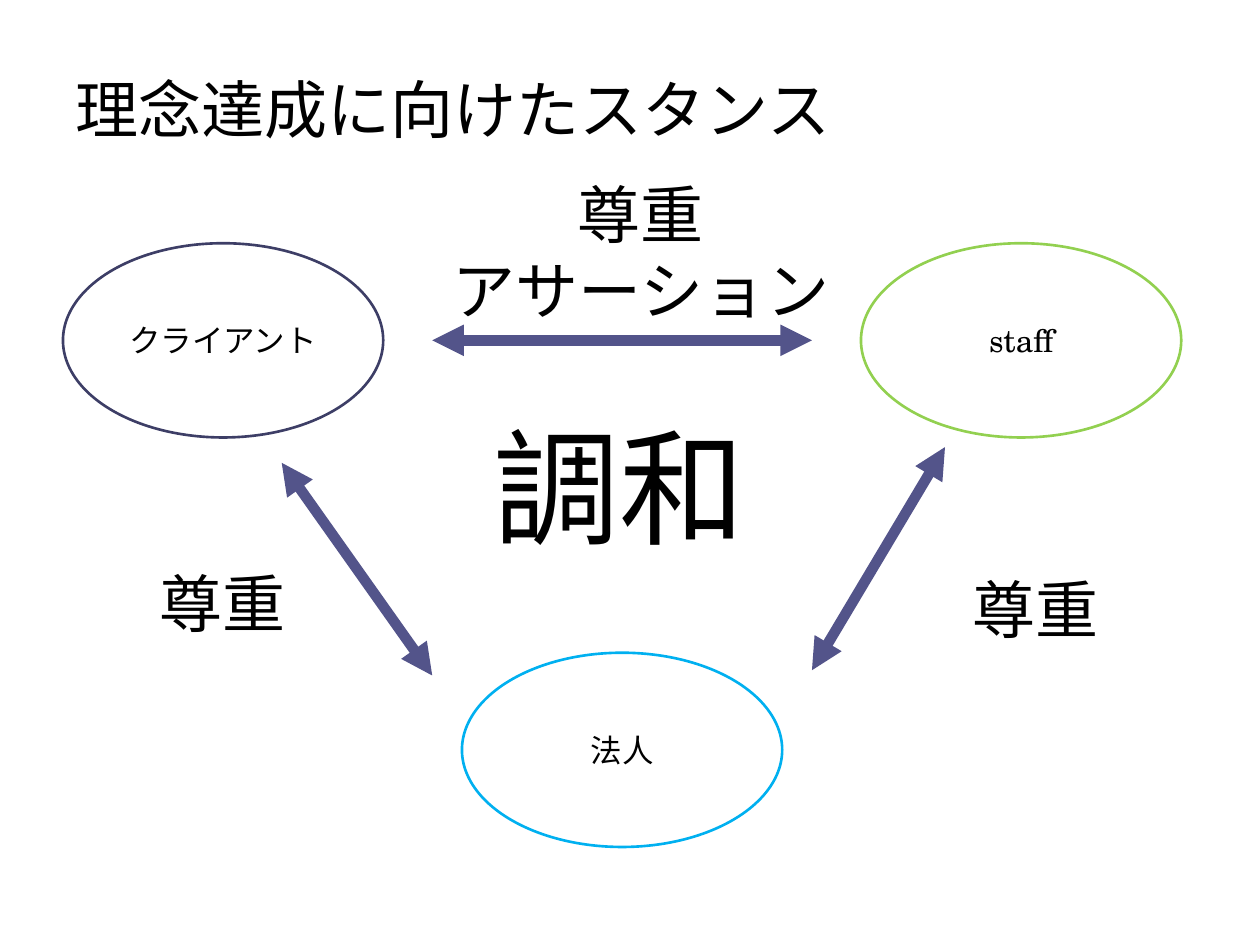
"""Build the slide on the stance for achieving the philosophy."""
import pptx
import pptx.dml.color
import pptx.enum.shapes
import pptx.enum.text
import pptx.oxml
import pptx.oxml.ns
import pptx.util

Pt = pptx.util.Pt
ALIGN = pptx.enum.text.PP_ALIGN
ANCHOR = pptx.enum.text.MSO_ANCHOR
FIT = pptx.enum.text.MSO_AUTO_SIZE
COLORS = {
    "text": "000000",
    "arrow": "53548A",
    "client": "3D3E66",
    "staff": "92D050",
    "corporation": "00B0F0",
}
BODY_FONT = "TeX Gyre Schola"


def color(name):
    return pptx.dml.color.RGBColor.from_string(COLORS[name])


def write(box, lines, size, font, align, frame_format):
    frame = box.text_frame
    for name, value in frame_format.items():
        setattr(frame, name, value)
    for index, line in enumerate(lines):
        para = frame.add_paragraph() if index else frame.paragraphs[0]
        para.alignment = align
        span = para.add_run()
        span.text = line
        for name, value in {"size": Pt(size), "name": font}.items():
            setattr(span.font, name, value)
        span.font.color.rgb = color("text")


deck = pptx.Presentation()
deck.slide_width, deck.slide_height = Pt(720), Pt(540)
page = deck.slides.add_slide(deck.slide_layouts[6])
shapes = page.shapes

title = shapes.add_textbox(Pt(36), Pt(20), Pt(648), Pt(84))
write(title, ["理念達成に向けたスタンス"], 36, "Karla", ALIGN.LEFT,
      {"word_wrap": True, "vertical_anchor": ANCHOR.MIDDLE})

parties = [
    ("client", "クライアント", 36, 139),
    ("staff", "staff", 492, 139),
    ("corporation", "法人", 264, 373),
]
for party, label, left, top in parties:
    oval = shapes.add_shape(pptx.enum.shapes.MSO_SHAPE.OVAL,
                            Pt(left), Pt(top), Pt(183), Pt(111))
    oval.shadow.inherit = False
    oval.fill.background()
    oval.line.color.rgb = color(party)
    oval.line.width = Pt(1.5)
    write(oval, [label], 18, BODY_FONT, ALIGN.CENTER,
          {"word_wrap": True, "vertical_anchor": ANCHOR.MIDDLE})

arrows = [
    (247, 194.5, 464, 194.5),
    (161, 264.5, 247, 386),
    (540, 255.5, 464, 383),
]
for ends in arrows:
    arrow = shapes.add_connector(pptx.enum.shapes.MSO_CONNECTOR.STRAIGHT,
                                 *[Pt(end) for end in ends])
    arrow.line.color.rgb = color("arrow")
    arrow.line.width = Pt(6)
    outline = arrow.line._get_or_add_ln()
    for tag in ("a:headEnd", "a:tailEnd"):
        tip = pptx.oxml.parse_xml(f'<{tag} {pptx.oxml.ns.nsdecls("a")} type="triangle"/>')
        outline.append(tip)
    arrow._element.spPr.append(
        pptx.oxml.parse_xml(f'<a:effectLst {pptx.oxml.ns.nsdecls("a")}/>'))

captions = [
    (["尊重", "アサーション"], 36, ALIGN.CENTER, 250, 97, 232.5, 94.5),
    (["調和"], 72, ALIGN.LEFT, 275, 230.5, 160, 94.5),
    (["尊重"], 36, ALIGN.CENTER, 83.5, 319, 87, 51),
    (["尊重"], 36, ALIGN.CENTER, 548, 322.5, 87, 51),
]
for lines, size, align, *bounds in captions:
    caption = shapes.add_textbox(*[Pt(bound) for bound in bounds])
    write(caption, lines, size, BODY_FONT, align,
          {"word_wrap": False, "auto_size": FIT.SHAPE_TO_FIT_TEXT})

deck.save("out.pptx")
